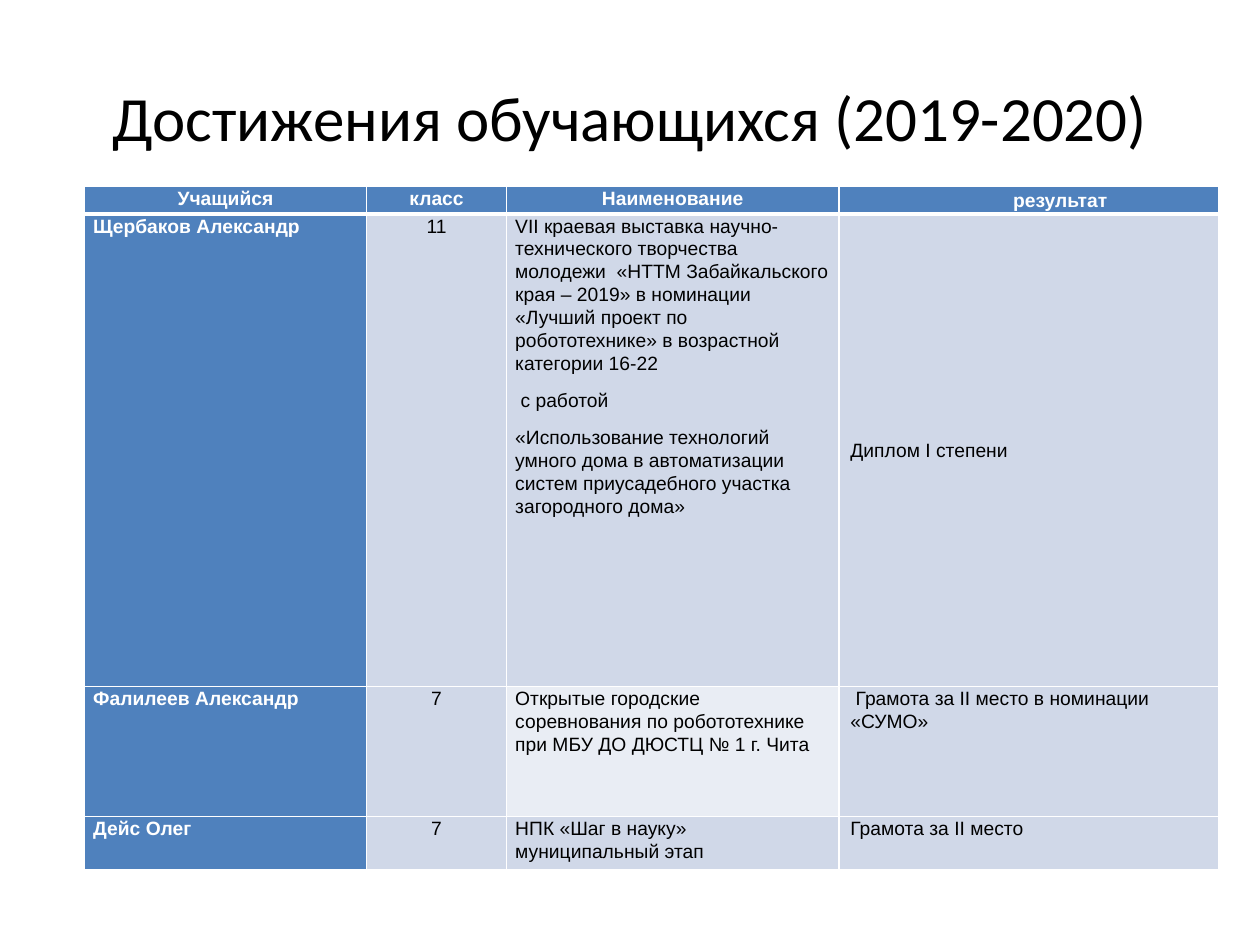
from dataclasses import dataclass
from itertools import product

from lxml import etree
from pptx import Presentation
from pptx.dml.color import RGBColor
from pptx.enum import text as t
from pptx.oxml.ns import qn
from pptx.util import Pt

HUES = {"head": "4F81BD", "band": "D0D8E8", "pale": "E9EDF4",
        "white": "FFFFFF", "black": "000000"}
COLS = (161.3, 79.9, 190.1, 216.7)
ROWS = (15.84, 270, 74.16, 30.24)
LEFT, TOP = 48.24, 106.56
MID = t.MSO_ANCHOR.MIDDLE


@dataclass
class Entry:
    lines: tuple[str, ...]
    fill: str = "band"
    mid: bool = False


@dataclass
class Award:
    name: str
    grade: str
    event: Entry
    prize: Entry


HEADS = ("Учащийся", "класс", "Наименование", "результат")
AWARDS = (
    Award("Щербаков Александр", "11",
          Entry(("VII краевая выставка научно-технического творчества молодежи  "
                 "«НТТМ Забайкальского края – 2019» в номинации «Лучший проект по "
                 "робототехнике» в возрастной категории 16-22",
                 " с работой",
                 "«Использование технологий умного дома в автоматизации систем "
                 "приусадебного участка загородного дома»")),
          Entry(("Диплом I степени",), mid=True)),
    Award("Фалилеев Александр", "7",
          Entry(("Открытые городские соревнования по робототехнике "
                 "при МБУ ДО ДЮСТЦ № 1 г. Чита",), "pale"),
          Entry((" Грамота за II место в номинации «СУМО»",))),
    Award("Дейс Олег", "7",
          Entry(("НПК «Шаг в науку» муниципальный этап",)),
          Entry(("Грамота за II место",))),
)


def color(key: str) -> RGBColor:
    return RGBColor.from_string(HUES[key])


def style(para, size: float, face: str, hue: str, bold: bool = False) -> None:
    font = para.font
    font.size, font.name, font.bold = Pt(size), face, bold
    font.color.rgb = color(hue)


def edge(cell, top: float, base: float) -> None:
    """Draw white borders; the side lines are 1 pt wide."""
    props = cell._tc.get_or_add_tcPr()
    sides = (("L", 1), ("R", 1), ("T", top), ("B", base))
    for i, (side, wide) in enumerate(sides):
        line = etree.Element(qn(f"a:ln{side}"), w=str(Pt(wide)))
        fill = etree.SubElement(line, qn("a:solidFill"))
        etree.SubElement(fill, qn("a:srgbClr"), val=HUES["white"])
        props.insert(i, line)


def put(cell, entry: Entry, row: int, col: int) -> None:
    head = row == 0
    strong = head or col == 0
    wide = head and col == 3
    cell.margin_left = cell.margin_right = Pt(5)
    cell.margin_top = cell.margin_bottom = Pt(0)
    cell.fill.solid()
    cell.fill.fore_color.rgb = color(entry.fill)
    if entry.mid:
        cell.vertical_anchor = MID
    edge(cell, 3 if row == 1 else 1, 3 if head else 1)

    cell.text_frame.text = "\n".join(entry.lines)
    for para in cell.text_frame.paragraphs:
        para.alignment = t.PP_ALIGN.CENTER if head or col == 1 else t.PP_ALIGN.LEFT
        para.line_spacing = 1.15 if wide else 1.07
        para.space_after = Pt(10 if wide else 8)
        if col == 3:
            para._p.get_or_add_pPr().set("marL", str(Pt(36 if head else 1.4)))
        style(para, 11, "Arial", "white" if strong else "black", strong)


def title(slide, words: str) -> None:
    frame = slide.shapes.add_textbox(Pt(36), Pt(21.6), Pt(648), Pt(90)).text_frame
    frame.word_wrap = True
    frame.vertical_anchor = MID
    frame.text = words
    para = frame.paragraphs[0]
    para.alignment = t.PP_ALIGN.CENTER
    style(para, 36, "Calibri", "black")


def table(slide) -> None:
    grid = slide.shapes.add_table(len(ROWS), len(COLS), Pt(LEFT), Pt(TOP),
                                  Pt(sum(COLS)), Pt(sum(ROWS))).table
    for col, wide in zip(grid.columns, COLS):
        col.width = Pt(wide)
    for row, high in zip(grid.rows, ROWS):
        row.height = Pt(high)
    cells = [[Entry((word,), "head") for word in HEADS]]
    cells += [[Entry((a.name,), "head"), Entry((a.grade,)), a.event, a.prize]
              for a in AWARDS]
    for row, col in product(range(len(ROWS)), range(len(COLS))):
        put(grid.cell(row, col), cells[row][col], row, col)


def main() -> None:
    deck = Presentation()
    deck.slide_width, deck.slide_height = Pt(720), Pt(540)
    slide = deck.slides.add_slide(deck.slide_layouts[6])
    title(slide, "Достижения обучающихся (2019-2020)")
    table(slide)
    deck.save("out.pptx")


if __name__ == "__main__":
    main()
